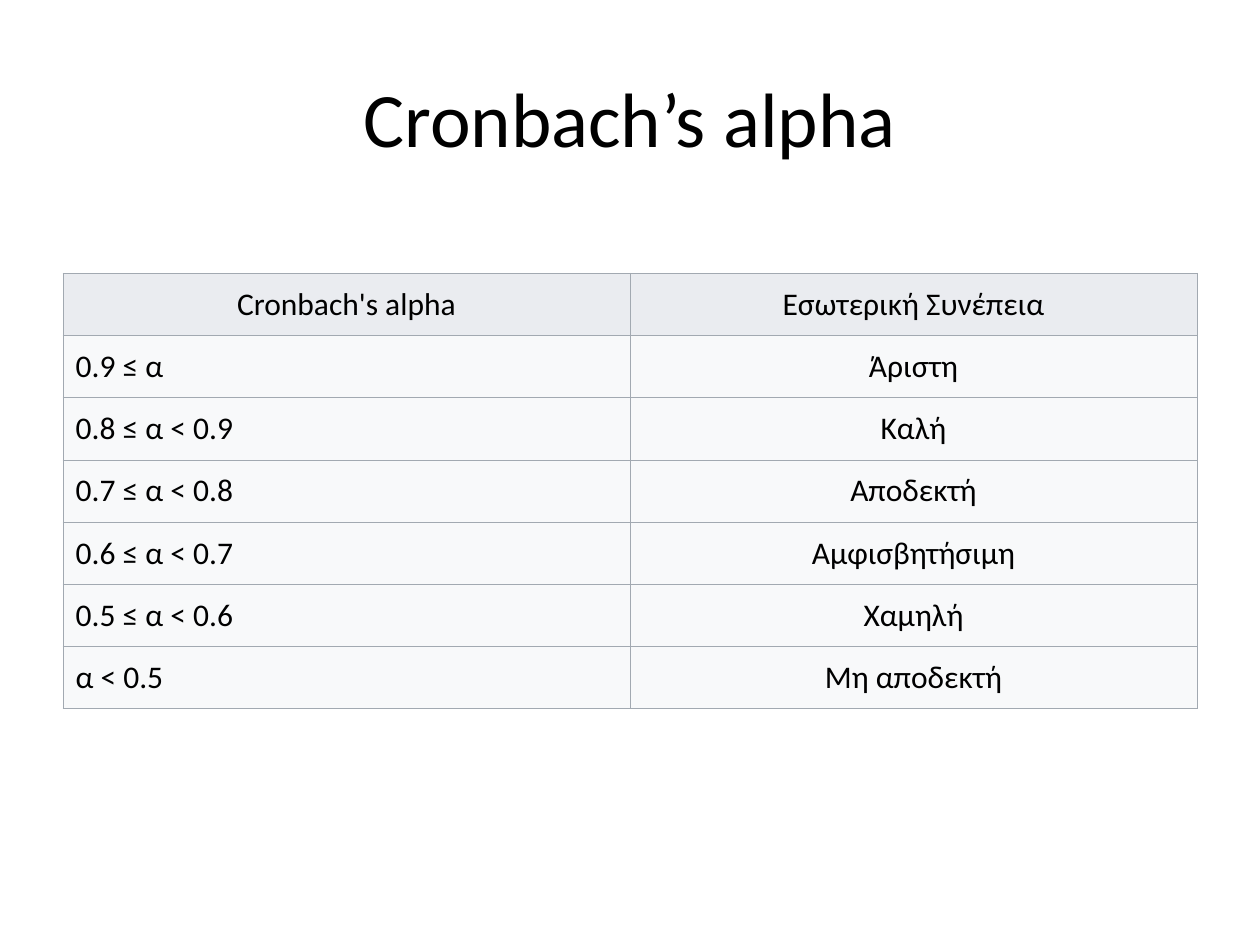
from dataclasses import dataclass

from lxml.etree import SubElement
from pptx import Presentation
from pptx.dml.color import RGBColor as Rgb
from pptx.enum.text import MSO_ANCHOR as Anchor, PP_ALIGN as Align
from pptx.oxml.ns import qn
from pptx.util import Pt


@dataclass(frozen=True)
class Theme:
    font: str = "Calibri"
    title_size: float = 44
    cell_size: float = 18
    ink: str = "000000"
    header_fill: str = "EAECF0"
    body_fill: str = "F8F9FA"
    border: str = "A2A9B1"
    border_width: float = 0.6


@dataclass(frozen=True)
class Level:
    alpha: str
    consistency: str


THEME = Theme()
MARGIN, CONTENT_WIDTH = 36, 648
TITLE_TOP, TITLE_HEIGHT = 21.6, 90
TABLE_TOP, ROW_HEIGHT = 156.24, 35.55

HEADINGS = Level("Cronbach's alpha", "Εσωτερική Συνέπεια")
LEVELS = [
    Level("0.9 ≤ α", "Άριστη"),
    Level("0.8 ≤ α < 0.9", "Καλή"),
    Level("0.7 ≤ α < 0.8", "Αποδεκτή"),
    Level("0.6 ≤ α < 0.7", "Αμφισβητήσιμη"),
    Level("0.5 ≤ α < 0.6", "Χαμηλή"),
    Level("α < 0.5", "Μη αποδεκτή"),
]


def write(frame, wording: str, size: float, align: Align) -> None:
    frame.word_wrap = True
    frame.text = wording
    paragraph = frame.paragraphs[0]
    paragraph.alignment = align
    font = paragraph.runs[0].font
    for attribute, value in {"name": THEME.font, "size": Pt(size)}.items():
        setattr(font, attribute, value)
    font.color.rgb = Rgb.from_string(THEME.ink)


def draw_borders(cell) -> None:
    properties = cell._tc.get_or_add_tcPr()
    for side in ("lnL", "lnR", "lnT", "lnB"):
        line = SubElement(properties, qn(f"a:{side}"), w=str(Pt(THEME.border_width)))
        solid = SubElement(line, qn("a:solidFill"))
        SubElement(solid, qn("a:srgbClr"), val=THEME.border)


def draw_cell(cell, wording: str, fill: str, align: Align) -> None:
    write(cell.text_frame, wording, THEME.cell_size, align)
    cell.vertical_anchor = Anchor.MIDDLE
    draw_borders(cell)
    cell.fill.solid()
    cell.fill.fore_color.rgb = Rgb.from_string(fill)


def draw_title(slide) -> None:
    title = slide.shapes.add_textbox(
        Pt(MARGIN), Pt(TITLE_TOP), Pt(CONTENT_WIDTH), Pt(TITLE_HEIGHT)
    )
    title.text_frame.vertical_anchor = Anchor.MIDDLE
    write(title.text_frame, "Cronbach’s alpha", THEME.title_size, Align.CENTER)


def draw_scale(slide, levels: list[Level]) -> None:
    rows = [HEADINGS, *levels]
    scale = slide.shapes.add_table(
        len(rows), 2, Pt(MARGIN), Pt(TABLE_TOP),
        Pt(CONTENT_WIDTH), Pt(ROW_HEIGHT * len(rows)),
    ).table
    for index, level in enumerate(rows):
        is_header = index == 0
        fill = THEME.header_fill if is_header else THEME.body_fill
        alpha_align = Align.CENTER if is_header else Align.LEFT
        draw_cell(scale.cell(index, 0), level.alpha, fill, alpha_align)
        draw_cell(scale.cell(index, 1), level.consistency, fill, Align.CENTER)


def main() -> None:
    deck = Presentation()
    deck.slide_width, deck.slide_height = Pt(720), Pt(540)
    slide = deck.slides.add_slide(deck.slide_layouts[6])
    draw_title(slide)
    draw_scale(slide, LEVELS)
    deck.save("out.pptx")


if __name__ == "__main__":
    main()
